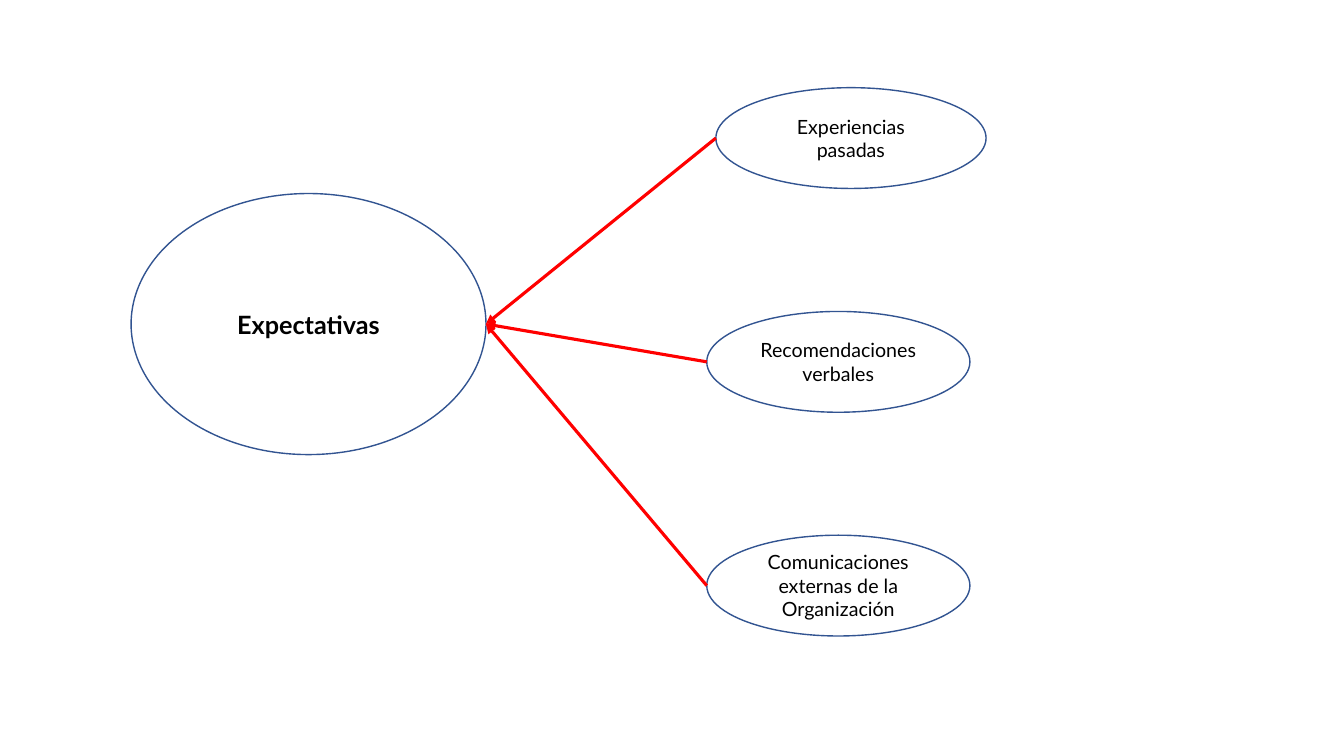
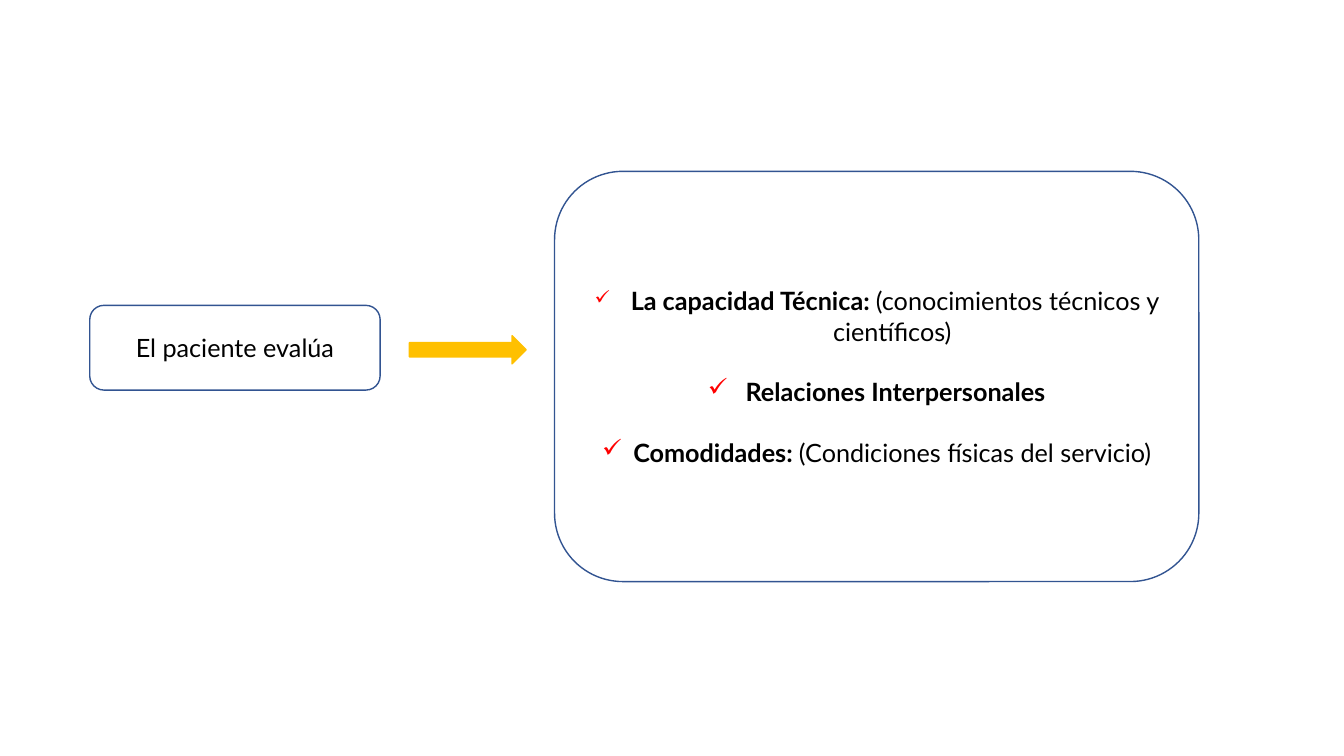
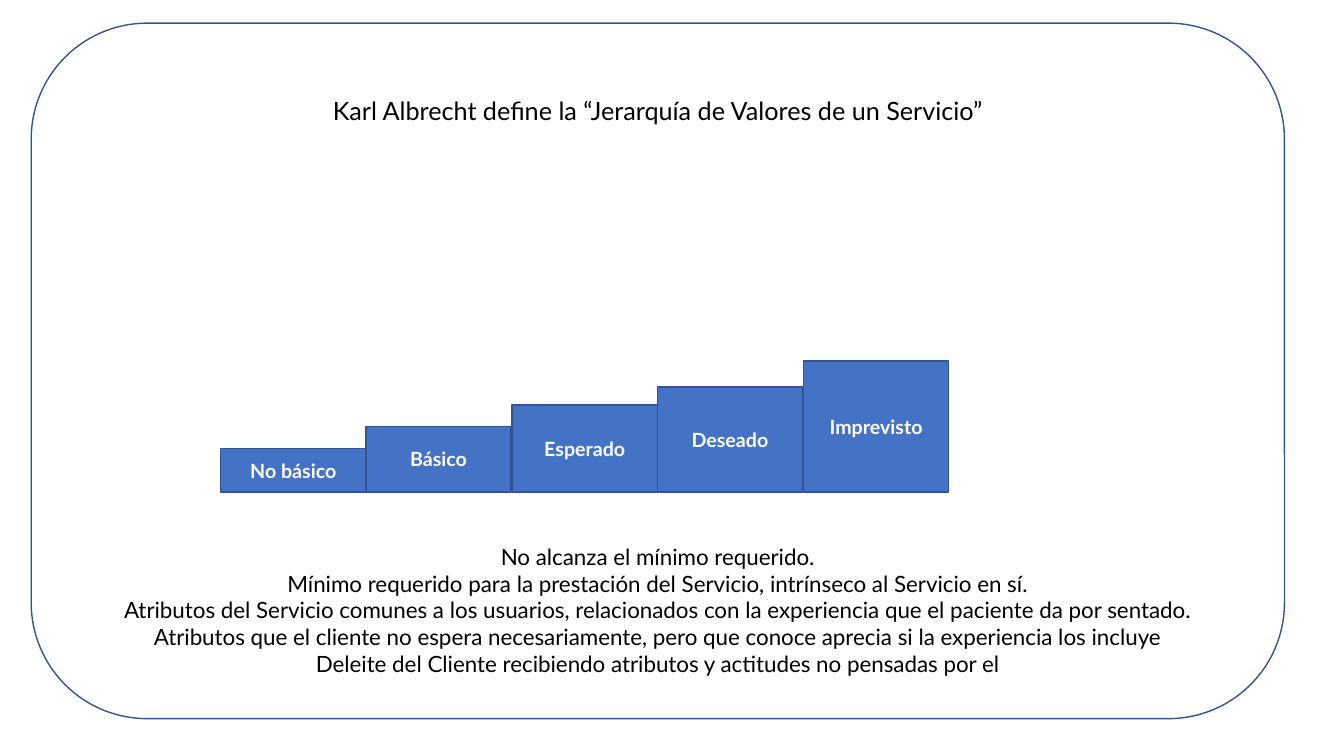
from lxml import etree
from pptx import Presentation
from pptx import util as u
from pptx.dml.color import RGBColor
from pptx.enum import shapes, text
from pptx.oxml import ns

PX = 9144
COLORS = {
    "black": "000000",
    "white": "FFFFFF",
    "outline": "325491",
    "red": "FF0000",
    "gold": "FFC000",
    "blue": "4472C4",
}
KIND = shapes.MSO_SHAPE


def px(length):
    return u.Emu(length * PX)


def rgb(name):
    return RGBColor.from_string(COLORS[name])


def child(parent, tag, **attributes):
    return etree.SubElement(parent, ns.qn(tag), attributes)


class Deck:
    def __init__(self, width, height):
        self.presentation = Presentation()
        self.presentation.slide_width = px(width)
        self.presentation.slide_height = px(height)
        self.slide = None

    def new_slide(self):
        self.slide = self.presentation.slides.add_slide(self.presentation.slide_layouts[6])

    def shape(self, kind, box, fill=None, line="outline"):
        shape = self.slide.shapes.add_shape(kind, *map(px, box))
        shape.shadow.inherit = False
        if fill:
            shape.fill.solid()
            shape.fill.fore_color.rgb = rgb(fill)
        else:
            shape.fill.background()
        shape.line.color.rgb = rgb(line)
        shape.line.width = u.Pt(1)
        return shape

    def fill_text(self, shape, paragraphs, **formats):
        frame = shape.text_frame
        frame.word_wrap = True
        frame.vertical_anchor = text.MSO_ANCHOR.MIDDLE
        for index, runs in enumerate(paragraphs):
            paragraph = frame.add_paragraph() if index else frame.paragraphs[0]
            paragraph.alignment = text.PP_ALIGN.CENTER
            for words, changes in runs:
                self.text_run(paragraph, words, {**formats, **changes})
        return frame

    def text_run(self, paragraph, words, formats):
        run = paragraph.add_run()
        run.text = words
        values = {"name": "Lato", "size": 18, "bold": False, "color": "black", **formats}
        run.font.color.rgb = rgb(values.pop("color"))
        values["size"] = u.Pt(values["size"])
        for name, value in values.items():
            setattr(run.font, name, value)

    def label(self, kind, box, words, fill=None, **formats):
        shape = self.shape(kind, box, fill)
        self.fill_text(shape, [[(words, {})]], **formats)
        return shape

    def bullet(self, paragraph, mark, color, indent):
        properties = paragraph._p.get_or_add_pPr()
        properties.set("marL", str(px(indent)))
        properties.set("indent", str(-px(indent)))
        child(child(properties, "a:buClr"), "a:srgbClr", val=COLORS[color])
        child(properties, "a:buChar", char=mark)

    def arrow(self, source, target):
        connector = self.slide.shapes.add_connector(
            shapes.MSO_CONNECTOR.STRAIGHT,
            source.left, source.top + source.height // 2,
            target.left + target.width, target.top + target.height // 2)
        connector.line.color.rgb = rgb("red")
        connector.line.width = u.Pt(2.25)
        properties = connector._element.spPr
        child(properties.get_or_add_ln(), "a:tailEnd", type="triangle")
        child(properties, "a:effectLst")


def expectations(deck):
    deck.new_slide()
    center = deck.label(KIND.OVAL, (130, 192, 352, 259), "Expectativas", bold=True)
    sources = [
        (710, 268, "Experiencias pasadas"),
        (701, 261, "Recomendaciones verbales"),
        (701, 261, "Comunicaciones externas de la Organización"),
    ]
    for index, (left, width, words) in enumerate(sources):
        source = deck.label(KIND.OVAL, (left, 87 + 222 * index, width, 100), words, size=14)
        deck.arrow(source, center)


def evaluation(deck):
    deck.new_slide()
    deck.label(KIND.ROUNDED_RECTANGLE, (89, 303, 288, 84), "El paciente evalúa")
    panel = deck.shape(KIND.ROUNDED_RECTANGLE, (550, 170, 639, 407))
    bold = {"bold": True}
    frame = deck.fill_text(panel, [
        [(" ", {"name": "Times New Roman", "size": 14}),
         ("La capacidad Técnica: ", bold), ("(conocimientos técnicos y científicos)", {})],
        [(" ", {}), ("Relaciones Interpersonales", bold)],
        [("Comodidades: ", bold), ("(Condiciones físicas del servicio)", {})],
    ])
    for index, paragraph in enumerate(frame.paragraphs):
        if index:
            paragraph.space_before = u.Pt(21.6)
        deck.bullet(paragraph, "✓", "red", 31)
    deck.shape(KIND.RIGHT_ARROW, (406, 333, 116, 28), "gold", "gold")


def hierarchy(deck):
    deck.new_slide()
    panel = deck.shape(KIND.ROUNDED_RECTANGLE, (31, 23, 1243, 690))
    meanings = [
        "No alcanza el mínimo requerido.",
        "Mínimo requerido para la prestación del Servicio, intrínseco al Servicio en sí.",
        "Atributos del Servicio comunes a los usuarios, relacionados con la experiencia que el paciente da por sentado.",
        "Atributos que el cliente no espera necesariamente, pero que conoce aprecia si la experiencia los incluye",
        "Deleite del Cliente recibiendo atributos y actitudes no pensadas por el",
    ]
    title = ("Karl Albrecht define la “Jerarquía de Valores de un Servicio”", {"size": 18})
    frame = deck.fill_text(panel, [[title]] + [[(words, {})] for words in meanings], size=16)
    frame.vertical_anchor = text.MSO_ANCHOR.TOP
    frame.margin_top = px(38)
    frame.paragraphs[1].space_before = u.Pt(298)

    steps = [("No básico", 43), ("Básico", 65), ("Esperado", 86), ("Deseado", 104), ("Imprevisto", 130)]
    left, bottom, width = 219, 488, 144
    for index, (words, height) in enumerate(steps):
        box = (left + index * (2 * width + 1) // 2, bottom - height, width, height)
        deck.label(KIND.RECTANGLE, box, words, "blue", size=14, bold=True, color="white")


def main():
    deck = Deck(1333, 750)
    for build in (expectations, evaluation, hierarchy):
        build(deck)
    deck.presentation.save("out.pptx")


if __name__ == "__main__":
    main()
